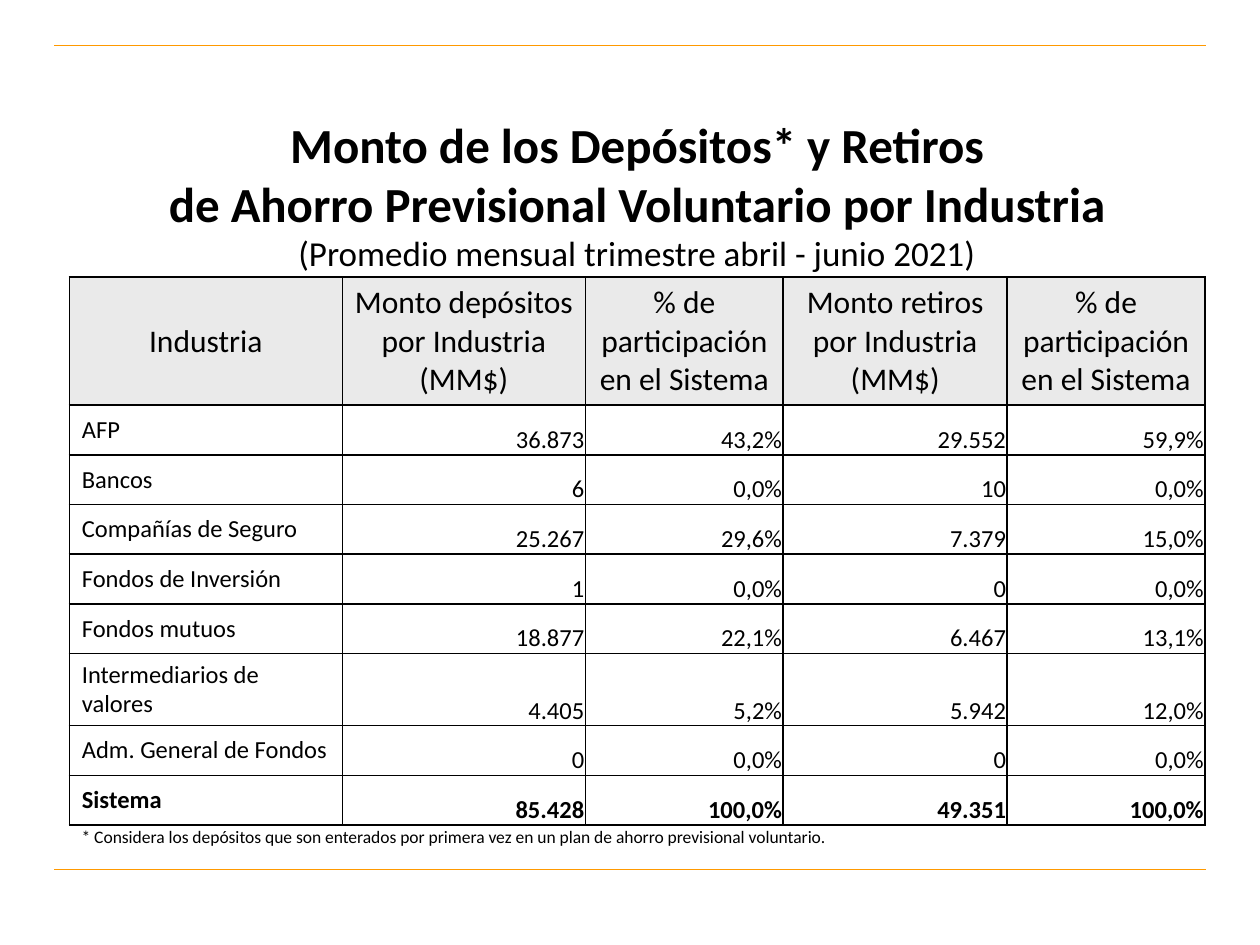
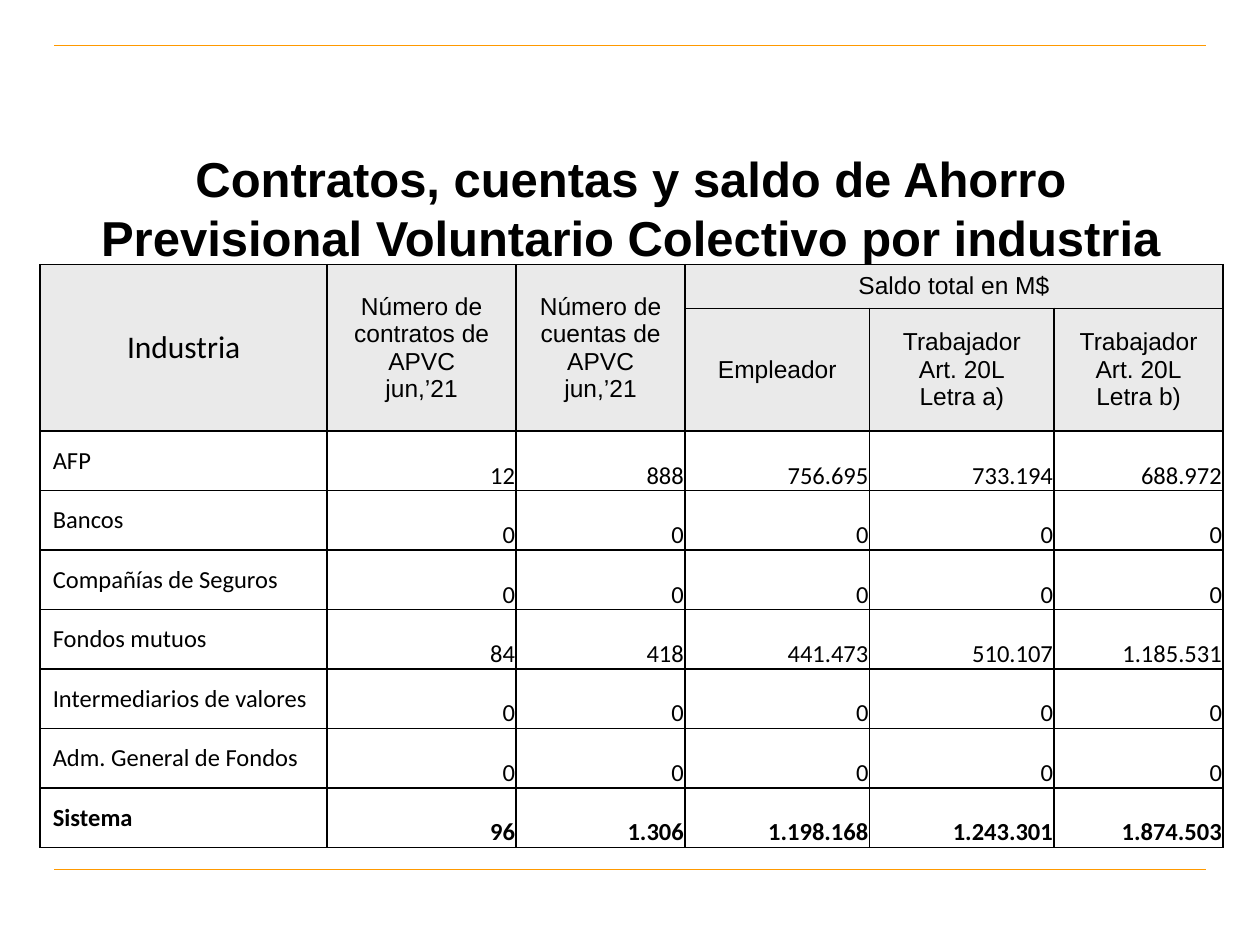
from lxml import etree
from pptx import Presentation
from pptx.dml.color import RGBColor
from pptx.enum import shapes, text
from pptx.oxml import ns
from pptx.util import Pt

INK = {"text": "000000", "rule": "FF9900", "head": "EAEAEA", "body": "FFFFFF"}
SANS, ARIAL = "Calibri", "Arial"
RULES = (26, 497)
SIDES = ("lnL", "lnR", "lnT", "lnB")
SHARE = "% de\nparticipación en el Sistema"

FLOWS = {
    "title": [
        ("Monto de los Depósitos* y Retiros", 28, True),
        ("de Ahorro Previsional Voluntario por Industria", 28, True),
        ("(Promedio mensual trimestre abril - junio 2021)", 20, False),
    ],
    "face": SANS,
    "box": (29.5, 71.3, 669, 79.2),
    "spot": (39.6, 158.4),
    "cols": (156, 139, 113, 128, 113),
    "tops": (73,),
    "step": 28.4,
    "size": 18,
    "heads": [
        ["Industria", "Monto depósitos por Industria (MM$)", SHARE,
         "Monto retiros\npor Industria (MM$)", SHARE],
    ],
    "spans": [],
    "rows": [
        ("AFP", "36.873", "43,2%", "29.552", "59,9%"),
        ("Bancos", "6", "0,0%", "10", "0,0%"),
        ("Compañías de Seguro", "25.267", "29,6%", "7.379", "15,0%"),
        ("Fondos de Inversión", "1", "0,0%", "0", "0,0%"),
        ("Fondos mutuos", "18.877", "22,1%", "6.467", "13,1%"),
        ("Intermediarios de valores", "4.405", "5,2%", "5.942", "12,0%"),
        ("Adm. General de Fondos", "0", "0,0%", "0", "0,0%"),
        ("Sistema", "85.428", "100,0%", "49.351", "100,0%"),
    ],
    "note": "* Considera los depósitos que son enterados por primera vez "
            "en un plan de ahorro previsional voluntario.",
}

GROUPS = {
    "title": [("Contratos, cuentas y saldo de Ahorro Previsional Voluntario "
               "Colectivo por industria", 28, True)],
    "face": ARIAL,
    "box": (36.5, 83.5, 648, 69.6),
    "spot": (23, 151.2),
    "cols": (164, 108, 96.5, 105.5, 105.5, 96.5),
    "tops": (25, 70),
    "step": 34,
    "size": 14,
    "heads": [
        ["Industria", "Número de contratos de APVC\njun,’21",
         "Número de cuentas de APVC\njun,’21", "Saldo total en M$", "", ""],
        ["", "", "", "Empleador", "Trabajador\nArt. 20L\nLetra a)",
         "Trabajador\nArt. 20L\nLetra b)"],
    ],
    "spans": [(0, 0, 1, 0), (0, 1, 1, 1), (0, 2, 1, 2), (0, 3, 0, 5)],
    "rows": [
        ("AFP", "12", "888", "756.695", "733.194", "688.972"),
        ("Bancos", "0", "0", "0", "0", "0"),
        ("Compañías de Seguros", "0", "0", "0", "0", "0"),
        ("Fondos mutuos", "84", "418", "441.473", "510.107", "1.185.531"),
        ("Intermediarios de valores", "0", "0", "0", "0", "0"),
        ("Adm. General de Fondos", "0", "0", "0", "0", "0"),
        ("Sistema", "96", "1.306", "1.198.168", "1.243.301", "1.874.503"),
    ],
    "note": None,
}


def tint(name):
    return RGBColor.from_string(INK[name])


def style(para, face, size, bold=False, align=text.PP_ALIGN.LEFT):
    para.alignment = align
    for run in para.runs:
        font = run.font
        font.name, font.size, font.bold = face, Pt(size), bold
        font.color.rgb = tint("text")


def add_rules(slide):
    for y in RULES:
        line = slide.shapes.add_connector(
            shapes.MSO_CONNECTOR.STRAIGHT, Pt(31), Pt(y), Pt(689), Pt(y))
        line.line.color.rgb = tint("rule")
        line.line.width = Pt(0.75)
        etree.SubElement(line.element.spPr, ns.qn("a:effectLst"))


def add_title(slide, data):
    title = slide.shapes.title
    title.left, title.top, title.width, title.height = map(Pt, data["box"])
    frame = title.text_frame
    frame.text = "\n".join(part[0] for part in data["title"])
    frame.word_wrap = True
    frame.auto_size = text.MSO_AUTO_SIZE.NONE
    frame.vertical_anchor = text.MSO_ANCHOR.MIDDLE
    for para, (_, size, bold) in zip(frame.paragraphs, data["title"]):
        style(para, data["face"], size, bold, text.PP_ALIGN.CENTER)


def add_edges(cell):
    props = cell._tc.get_or_add_tcPr()
    for side in SIDES:
        edge = etree.SubElement(props, ns.qn("a:" + side), w=str(Pt(1)))
        fill = etree.SubElement(edge, ns.qn("a:solidFill"))
        etree.SubElement(fill, ns.qn("a:srgbClr"), val=INK["text"])


def fill_cell(cell, words, data, row, col, last):
    head = row < len(data["tops"])
    add_edges(cell)
    cell.fill.solid()
    cell.fill.fore_color.rgb = tint("head" if head else "body")
    cell.text_frame.text = words
    cell.vertical_anchor = text.MSO_ANCHOR.MIDDLE
    face, size, align = SANS, 14, text.PP_ALIGN.LEFT
    if head:
        align = text.PP_ALIGN.CENTER
        face, size = (data["face"], data["size"]) if col else (SANS, 18)
    elif col:
        align = text.PP_ALIGN.RIGHT
        cell.vertical_anchor = text.MSO_ANCHOR.BOTTOM
        cell.margin_left = cell.margin_right = cell.margin_top = Pt(0.7)
        cell.margin_bottom = 0
    for para in cell.text_frame.paragraphs:
        style(para, face, size, last, align)


def add_grid(slide, data):
    rows = data["heads"] + data["rows"]
    highs = list(data["tops"]) + [data["step"]] * len(data["rows"])
    cols = data["cols"]
    x, y = data["spot"]
    grid = slide.shapes.add_table(len(rows), len(cols), Pt(x), Pt(y),
                                  Pt(sum(cols)), Pt(sum(highs))).table
    for col, wide in zip(grid.columns, cols):
        col.width = Pt(wide)
    for line, high in zip(grid.rows, highs):
        line.height = Pt(high)
    for r, row in enumerate(rows):
        for c, words in enumerate(row):
            fill_cell(grid.cell(r, c), words, data, r, c, r == len(rows) - 1)
    for top, left, low, right in data["spans"]:
        grid.cell(top, left).merge(grid.cell(low, right))


def add_note(slide, words):
    box = slide.shapes.add_textbox(Pt(39.6), Pt(468.7), Pt(446.4), Pt(31.7))
    box.text_frame.word_wrap = True
    box.text_frame.text = words
    style(box.text_frame.paragraphs[0], SANS, 10)


def main():
    deck = Presentation()
    deck.slide_width, deck.slide_height = Pt(720), Pt(540)
    for data in (FLOWS, GROUPS):
        slide = deck.slides.add_slide(deck.slide_layouts[5])
        add_rules(slide)
        add_title(slide, data)
        add_grid(slide, data)
        if data["note"]:
            add_note(slide, data["note"])
    deck.save("out.pptx")


if __name__ == "__main__":
    main()
